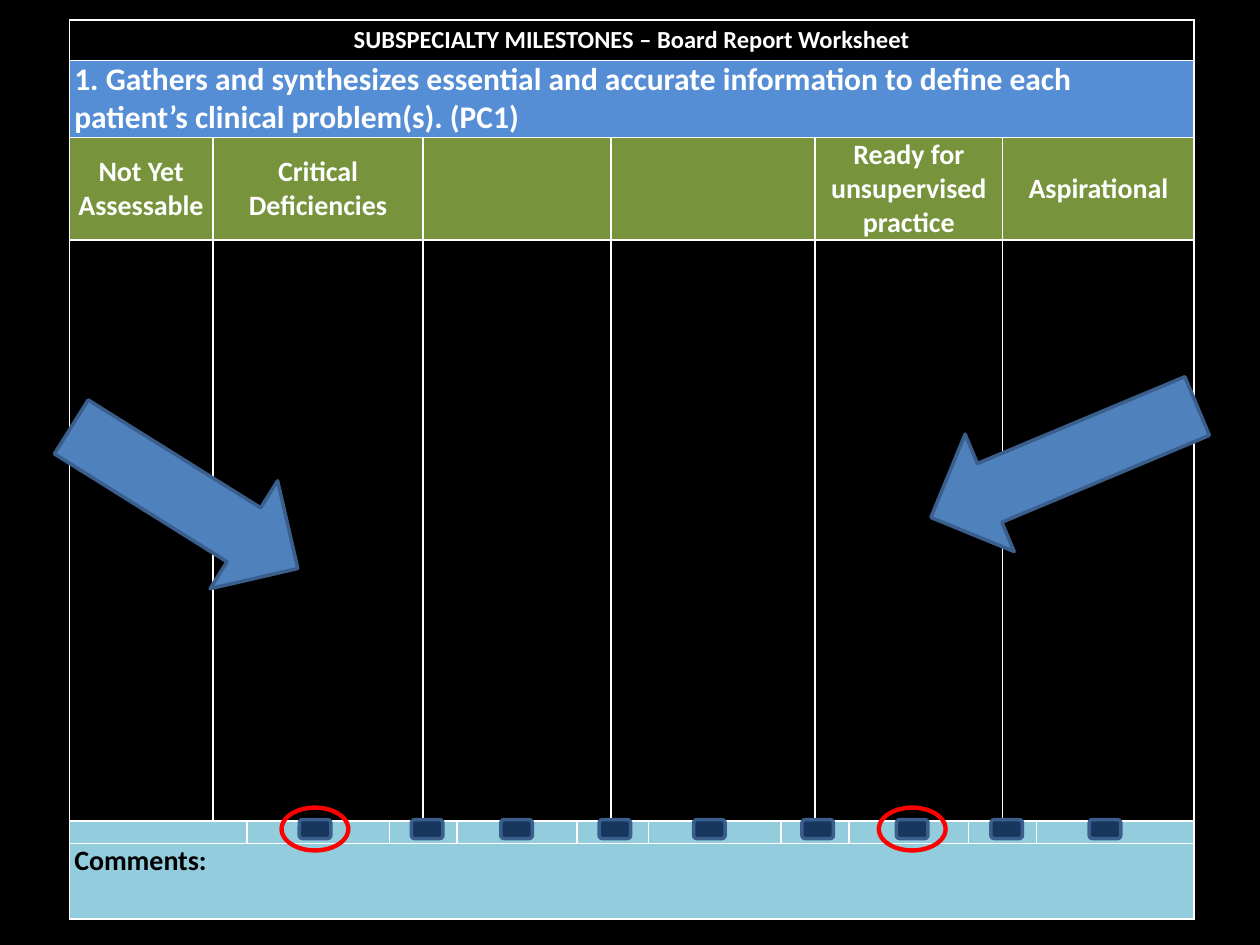
from itertools import accumulate

from lxml import etree
from pptx import Presentation
from pptx.dml.color import RGBColor
from pptx.enum.shapes import MSO_SHAPE
from pptx.enum.text import MSO_ANCHOR, PP_ALIGN
from pptx.oxml.ns import qn
from pptx.util import Inches, Pt

CENTER, LEFT = PP_ALIGN.CENTER, PP_ALIGN.LEFT
MIDDLE, TOP = MSO_ANCHOR.MIDDLE, MSO_ANCHOR.TOP
ROUNDED, OVAL, ARROW = MSO_SHAPE.ROUNDED_RECTANGLE, MSO_SHAPE.OVAL, MSO_SHAPE.DOWN_ARROW

FONT = "Calibri"
COLORS = {
    "background": "000000", "white": "FFFFFF", "black": "000000",
    "competency": "558ED5", "levels": "77933C", "scale": "93CDDD",
    "marker": "17375E", "arrow": "4F81BD", "outline": "3A5F8C", "ring": "FF0000",
}

WORKSHEET_BOX = (0.55, 0.16, 8.94, 7.11)
COLUMNS = [1.14, 0.27, 1.13, 0.27, 0.27, 0.95, 0.27, 0.3, 1.05, 0.27, 0.27, 0.95, 0.27, 0.27, 1.25]
ROWS = [0.32, 0.59, 0.79, 4.61, 0.18, 0.6]
LEVEL_SPANS = [1, 3, 3, 3, 3, 2]
SCALE_SPANS = [2, 1] * 5
LEVELS = ["Not Yet Assessable", "Critical Deficiencies", "", "",
          "Ready for unsupervised practice", "Aspirational"]

MARKER_CENTERS = [2.5, 3.39, 4.1, 4.88, 5.63, 6.49, 7.24, 7.99, 8.77]
RINGED_MARKERS = [0, 6]
MARKER_SIZE, RING_SIZE = (0.25, 0.15), (0.53, 0.34)
SCALE_CENTER_Y = 6.58
ARROWS = [((0.96, 2.89, 1.01, 2.12), 302), ((7.94, 2.52, 1.01, 2.29), 67.3)]


def rgb(name):
    return RGBColor.from_string(COLORS[name])


def add_borders(cell):
    """Draw a thin white line on all four sides, ahead of the cell's fill."""
    properties = cell._tc.get_or_add_tcPr()
    for position, side in enumerate(("a:lnL", "a:lnR", "a:lnT", "a:lnB")):
        border = etree.Element(qn(side), w=str(Pt(1)))
        solid = etree.SubElement(border, qn("a:solidFill"))
        etree.SubElement(solid, qn("a:srgbClr"), val=COLORS["white"])
        properties.insert(position, border)


def format_cell(cell, fill):
    cell.margin_left = cell.margin_right = Inches(0.04)
    cell.margin_top = cell.margin_bottom = 0
    if fill:
        cell.fill.solid()
        cell.fill.fore_color.rgb = rgb(fill)
    else:
        cell.fill.background()
    add_borders(cell)
    # A small size keeps an empty cell from stretching its row
    paragraph = cell.text_frame.paragraphs[0]._p
    etree.SubElement(paragraph, qn("a:endParaRPr"), sz="800")


def write_cell(cell, text, size, color="white", align=LEFT, anchor=TOP):
    cell.text_frame.text = text
    cell.vertical_anchor = anchor
    paragraph = cell.text_frame.paragraphs[0]
    paragraph.alignment = align
    for run in paragraph.runs:
        run.font.name, run.font.size, run.font.bold = FONT, Pt(size), True
        run.font.color.rgb = rgb(color)


def add_worksheet(slide, box):
    frame = slide.shapes.add_table(len(ROWS), len(COLUMNS), *map(Inches, box))
    table = frame.table
    table.first_row = table.horz_banding = False
    for column, width in zip(table.columns, COLUMNS):
        column.width = Inches(width)
    for row, height in zip(table.rows, ROWS):
        row.height = Inches(height)

    # Fills and merges, row by row
    whole = [len(COLUMNS)]
    row_spans = [whole, whole, LEVEL_SPANS, LEVEL_SPANS, SCALE_SPANS, whole]
    row_fills = [None, "competency", "levels", None, "scale", "scale"]
    for row, (spans, fill) in enumerate(zip(row_spans, row_fills)):
        for column in range(len(COLUMNS)):
            format_cell(table.cell(row, column), fill)
        for end, span in zip(accumulate(spans), spans):
            if span > 1:
                table.cell(row, end - span).merge(table.cell(row, end - 1))

    # Wording
    write_cell(table.cell(0, 0), "SUBSPECIALTY MILESTONES – Board Report Worksheet",
               14, align=CENTER, anchor=MIDDLE)
    write_cell(table.cell(1, 0), "1. Gathers and synthesizes essential and accurate information "
               "to define each patient’s clinical problem(s). (PC1)", 18)
    for end, span, level in zip(accumulate(LEVEL_SPANS), LEVEL_SPANS, LEVELS):
        if level:
            write_cell(table.cell(2, end - span), level, 16, align=CENTER, anchor=MIDDLE)
    write_cell(table.cell(5, 0), "Comments:", 16, color="black")


def add_outlined(slide, kind, box, fill, line, weight=2):
    shape = slide.shapes.add_shape(kind, *map(Inches, box))
    shape.shadow.inherit = False
    if fill:
        shape.fill.solid()
        shape.fill.fore_color.rgb = rgb(fill)
    else:
        shape.fill.background()
    shape.line.color.rgb = rgb(line)
    shape.line.width = Pt(weight)
    return shape


def centered_box(center_x, size):
    width, height = size
    return center_x - width / 2, SCALE_CENTER_Y - height / 2, width, height


def add_scale(slide):
    for center in MARKER_CENTERS:
        add_outlined(slide, ROUNDED, centered_box(center, MARKER_SIZE), "marker", "outline")


def add_callouts(slide):
    for (box, angle), marker in zip(ARROWS, RINGED_MARKERS):
        arrow = add_outlined(slide, ARROW, box, "arrow", "outline")
        arrow.rotation = angle
        ring_box = centered_box(MARKER_CENTERS[marker], RING_SIZE)
        add_outlined(slide, OVAL, ring_box, None, "ring", 2.5)


def main():
    deck = Presentation()
    deck.slide_width, deck.slide_height = Inches(10), Inches(7.5)
    slide = deck.slides.add_slide(deck.slide_layouts[6])
    slide.background.fill.solid()
    slide.background.fill.fore_color.rgb = rgb("background")
    add_worksheet(slide, WORKSHEET_BOX)
    add_scale(slide)
    add_callouts(slide)
    deck.save("out.pptx")


if __name__ == "__main__":
    main()
